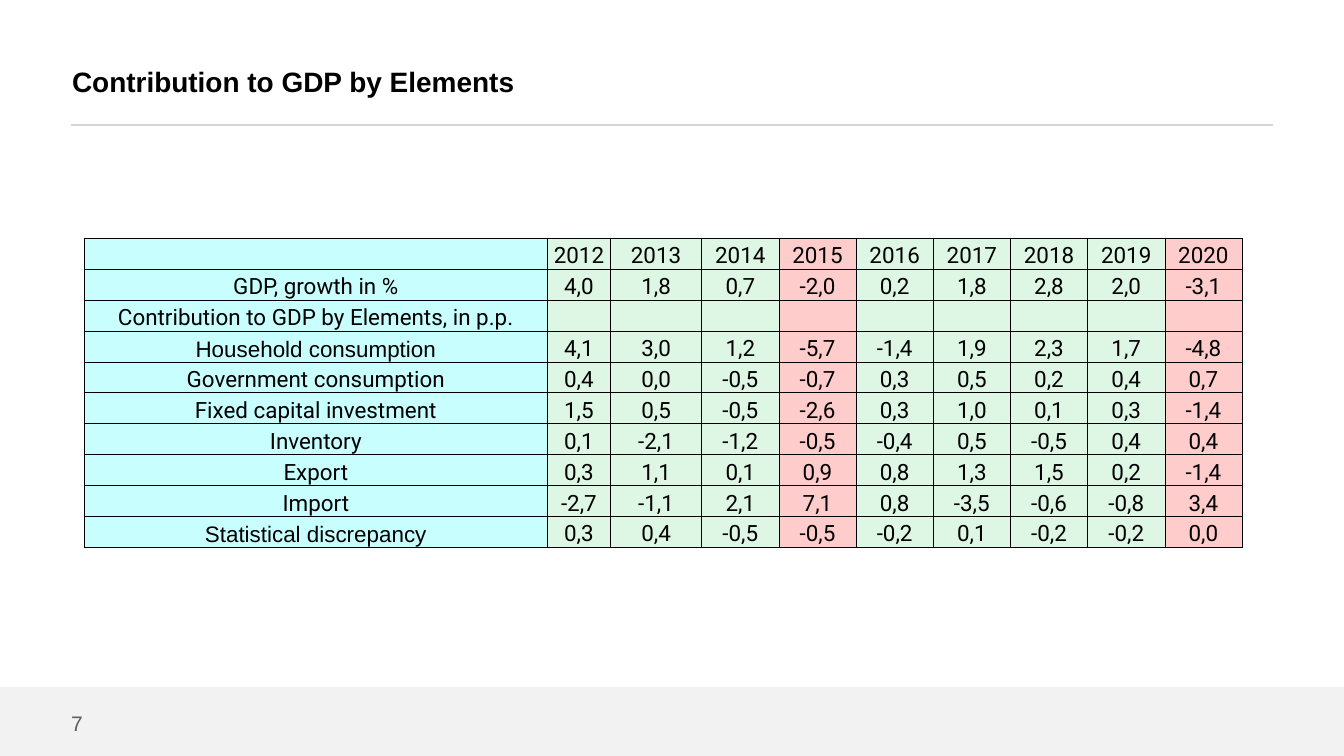
import pptx
import pptx.util
import pptx.dml.color
import pptx.enum.shapes
import pptx.enum.text
import pptx.oxml.ns
from lxml import etree

Cm, Pt = pptx.util.Cm, pptx.util.Pt
RGBColor = pptx.dml.color.RGBColor
PP_ALIGN = pptx.enum.text.PP_ALIGN
MSO_ANCHOR = pptx.enum.text.MSO_ANCHOR
qn = pptx.oxml.ns.qn

BLACK = RGBColor(0x00, 0x00, 0x00)
RULE_GREY = RGBColor(0xD5, 0xD5, 0xD5)
FOOTER_GREY = RGBColor(0xF2, 0xF2, 0xF2)
NUMBER_GREY = RGBColor(0x5E, 0x5E, 0x5E)
LABEL_CYAN = RGBColor(0xC8, 0xFE, 0xFD)
GROWTH_GREEN = RGBColor(0xDE, 0xF6, 0xE4)
RECESSION_RED = RGBColor(0xFF, 0xCC, 0xCC)

MARGIN = 3.58
COLUMN_WIDTHS = [23.34, 3.18, 4.6] + [3.89] * 7
ROW_HEIGHT = 1.53
YEARS = [str(year) for year in range(2012, 2021)]
RECESSION_YEARS = ("2015", "2020")
ARIAL_LABELS = ("Household consumption", "Statistical discrepancy")
ROWS = [
    [""] + YEARS,
    ["GDP, growth in %", "4,0", "1,8", "0,7", "-2,0", "0,2", "1,8", "2,8", "2,0", "-3,1"],
    ["Contribution to GDP by Elements, in p.p."] + [""] * len(YEARS),
    ["Household consumption", "4,1", "3,0", "1,2", "-5,7", "-1,4", "1,9", "2,3", "1,7", "-4,8"],
    ["Government consumption", "0,4", "0,0", "-0,5", "-0,7", "0,3", "0,5", "0,2", "0,4", "0,7"],
    ["Fixed capital investment", "1,5", "0,5", "-0,5", "-2,6", "0,3", "1,0", "0,1", "0,3", "-1,4"],
    ["Inventory", "0,1", "-2,1", "-1,2", "-0,5", "-0,4", "0,5", "-0,5", "0,4", "0,4"],
    ["Export", "0,3", "1,1", "0,1", "0,9", "0,8", "1,3", "1,5", "0,2", "-1,4"],
    ["Import", "-2,7", "-1,1", "2,1", "7,1", "0,8", "-3,5", "-0,6", "-0,8", "3,4"],
    ["Statistical discrepancy", "0,3", "0,4", "-0,5", "-0,5", "-0,2", "0,1", "-0,2", "-0,2", "0,0"],
]


def add_run(p, text, size, color, font="Arial", bold=False):
    r = p.add_run()
    r.text = text
    r.font.name, r.font.size, r.font.bold = font, Pt(size), bold
    r.font.color.rgb = color


def add_text(s, left, top, width, height, text, size, color, bold=False, wrap=True):
    tf = s.shapes.add_textbox(Cm(left), Cm(top), Cm(width), Cm(height)).text_frame
    tf.word_wrap = wrap
    tf.vertical_anchor = MSO_ANCHOR.MIDDLE
    tf.margin_left = tf.margin_top = tf.margin_right = tf.margin_bottom = 0
    add_run(tf.paragraphs[0], text, size, color, bold=bold)


def add_rule(s, left, right, y):
    line = s.shapes.add_connector(
        pptx.enum.shapes.MSO_CONNECTOR.STRAIGHT, Cm(left), Cm(y), Cm(right), Cm(y))
    line.line.color.rgb = RULE_GREY
    line.line.width = Pt(1.5)
    etree.SubElement(line._element.spPr, qn("a:effectLst"))


def add_footer_band(s, top, width, height):
    sp = s.shapes.add_shape(
        pptx.enum.shapes.MSO_SHAPE.RECTANGLE, 0, Cm(top), Cm(width), Cm(height))
    sp.shadow.inherit = False
    sp.fill.solid()
    sp.fill.fore_color.rgb = FOOTER_GREY
    sp.line.fill.background()


def add_borders(cell):
    """Draw a thin black line on all four sides; call before setting the fill."""
    tc_pr = cell._tc.get_or_add_tcPr()
    for side in ("lnL", "lnR", "lnT", "lnB"):
        ln = etree.SubElement(tc_pr, qn("a:" + side), w=str(Pt(1)))
        fill = etree.SubElement(ln, qn("a:solidFill"))
        etree.SubElement(fill, qn("a:srgbClr"), val=str(BLACK))


def column_color(column):
    if column == 0:
        return LABEL_CYAN
    return RECESSION_RED if YEARS[column - 1] in RECESSION_YEARS else GROWTH_GREEN


def fill_cell(cell, text, color):
    add_borders(cell)
    cell.fill.solid()
    cell.fill.fore_color.rgb = color
    cell.margin_left = cell.margin_right = Cm(0.18)
    cell.margin_top = cell.margin_bottom = 0
    cell.vertical_anchor = MSO_ANCHOR.BOTTOM
    if text:
        p = cell.text_frame.paragraphs[0]
        p.alignment = PP_ALIGN.CENTER
        p.line_spacing = 1.15
        add_run(p, text, 32, BLACK, "Arial" if text in ARIAL_LABELS else "Roboto")


def add_gdp_table(s, left, top):
    table = s.shapes.add_table(
        len(ROWS), len(COLUMN_WIDTHS), Cm(left), Cm(top),
        Cm(sum(COLUMN_WIDTHS)), Cm(ROW_HEIGHT * len(ROWS))).table
    table.first_row = table.horz_banding = False
    for column, width in zip(table.columns, COLUMN_WIDTHS):
        column.width = Cm(width)
    for i, values in enumerate(ROWS):
        table.rows[i].height = Cm(ROW_HEIGHT)
        for j, text in enumerate(values):
            fill_cell(table.cell(i, j), text, column_color(j))


def main():
    prs = pptx.Presentation()
    prs.slide_width, prs.slide_height = Cm(67.74), Cm(38.1)
    s = prs.slides.add_slide(prs.slide_layouts[6])
    add_rule(s, MARGIN, 64.14, 6.3)
    add_footer_band(s, 34.62, 67.74, 3.48)
    add_text(s, MARGIN, 35.81, 1.3, 1.27, "7", 30, NUMBER_GREY, wrap=False)
    add_text(s, 3.63, 3.13, 51.16, 1.9, "Contribution to GDP by Elements", 40, BLACK, bold=True)
    add_gdp_table(s, 4.25, 12)
    prs.save("out.pptx")


if __name__ == "__main__":
    main()
